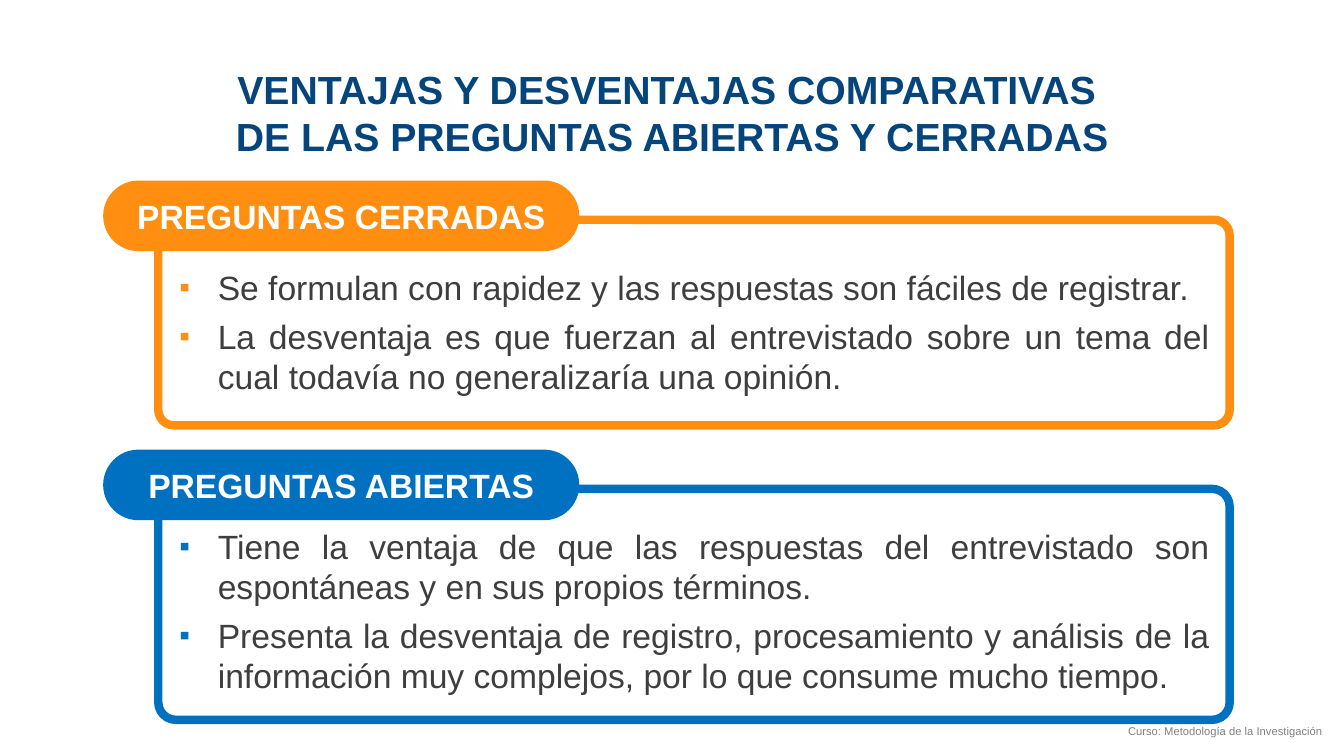
"""Build a slide comparing closed and open questions."""
from dataclasses import dataclass

from lxml import etree
from pptx import Presentation
from pptx.dml.color import RGBColor
from pptx.enum.shapes import MSO_SHAPE
from pptx.enum.text import MSO_ANCHOR, PP_ALIGN
from pptx.oxml.ns import qn
from pptx.util import Cm, Pt

ROUNDED = MSO_SHAPE.ROUNDED_RECTANGLE
MIDDLE = MSO_ANCHOR.MIDDLE
CENTER, RIGHT, JUSTIFY = PP_ALIGN.CENTER, PP_ALIGN.RIGHT, PP_ALIGN.JUSTIFY


@dataclass(frozen=True)
class Theme:
    """Colours, font and type sizes of the slide."""
    font: str = "Arial"
    navy: str = "05457C"
    orange: str = "FF8E11"
    blue: str = "0070C0"
    body: str = "3E3E3E"
    gray: str = "808080"
    white: str = "FFFFFF"
    title_size: int = 28
    body_size: int = 24
    footer_size: int = 8
    frame_line: int = 6


theme = Theme()


def write(para, text, size, color, align, bold=False):
    """Add one formatted run to an aligned paragraph."""
    para.alignment = align
    span = para.add_run()
    span.text = text
    span.font.name = theme.font
    span.font.size = Pt(size)
    span.font.bold = bold
    span.font.color.rgb = RGBColor.from_string(color)


def add_bullet(para, color):
    """Give a paragraph a hanging square bullet."""
    properties = para._p.get_or_add_pPr()
    properties.set("marL", str(Cm(3.51)))
    properties.set("indent", str(Cm(-0.97)))
    bullet_color = etree.SubElement(properties, qn("a:buClr"))
    etree.SubElement(bullet_color, qn("a:srgbClr"), val=color)
    etree.SubElement(properties, qn("a:buSzPct"), val="90000")
    etree.SubElement(properties, qn("a:buFont"), typeface=theme.font)
    etree.SubElement(properties, qn("a:buChar"), char="▪")


deck = Presentation()
deck.slide_width, deck.slide_height = Cm(33.87), Cm(19.05)
page = deck.slides.add_slide(deck.slide_layouts[6])

title = page.shapes.add_textbox(Cm(0), Cm(1.52), Cm(33.87), Cm(2.64)).text_frame
title.word_wrap = True
title_lines = ["VENTAJAS Y DESVENTAJAS COMPARATIVAS ",
               "DE LAS PREGUNTAS ABIERTAS Y CERRADAS"]
for index, line in enumerate(title_lines):
    para = title.add_paragraph() if index else title.paragraphs[0]
    write(para, line, theme.title_size, theme.navy, CENTER, bold=True)

footer = page.shapes.add_textbox(Cm(24.74), Cm(18.14), Cm(8.84), Cm(0.6)).text_frame
footer.word_wrap = True
write(footer.paragraphs[0], "Curso: Metodología de la Investigación",
      theme.footer_size, theme.gray, RIGHT)

panels = [
    ("PREGUNTAS CERRADAS", theme.orange, 4.55, 5.18, 6.6, 3.56,
     ["Se formulan con rapidez y las respuestas son fáciles de registrar.",
      "La desventaja es que fuerzan al entrevistado sobre un tema del cual "
      "todavía no generalizaría una opinión."]),
    ("PREGUNTAS ABIERTAS", theme.blue, 11.33, 5.82, 13.13, 4.57,
     ["Tiene la ventaja de que las respuestas del entrevistado son "
      "espontáneas y en sus propios términos.",
      "Presenta la desventaja de registro, procesamiento y análisis de la "
      "información muy complejos, por lo que consume mucho tiempo."]),
]
for heading, color, top, frame_height, text_top, text_height, points in panels:
    panel = page.shapes.add_group_shape().shapes
    accent = RGBColor.from_string(color)

    frame = panel.add_shape(ROUNDED, Cm(3.99), Cm(top + 0.99), Cm(27), Cm(frame_height))
    frame.adjustments[0] = 0.076
    frame.shadow.inherit = False
    frame.fill.background()
    frame.line.color.rgb = accent
    frame.line.width = Pt(theme.frame_line)

    pill = panel.add_shape(ROUNDED, Cm(2.6), Cm(top), Cm(12), Cm(1.78))
    pill.adjustments[0] = 0.5
    pill.shadow.inherit = False
    pill.fill.solid()
    pill.fill.fore_color.rgb = accent
    pill.line.fill.background()
    pill.text_frame.word_wrap = False
    pill.text_frame.vertical_anchor = MIDDLE
    write(pill.text_frame.paragraphs[0], heading, theme.body_size, theme.white,
          CENTER, bold=True)

    box = panel.add_textbox(Cm(1.73), Cm(text_top), Cm(29), Cm(text_height)).text_frame
    box.word_wrap = True
    for index, point in enumerate(points):
        para = box.add_paragraph() if index else box.paragraphs[0]
        add_bullet(para, color)
        para.space_after = Pt(6)
        write(para, point, theme.body_size, theme.body, JUSTIFY)

deck.save("out.pptx")
